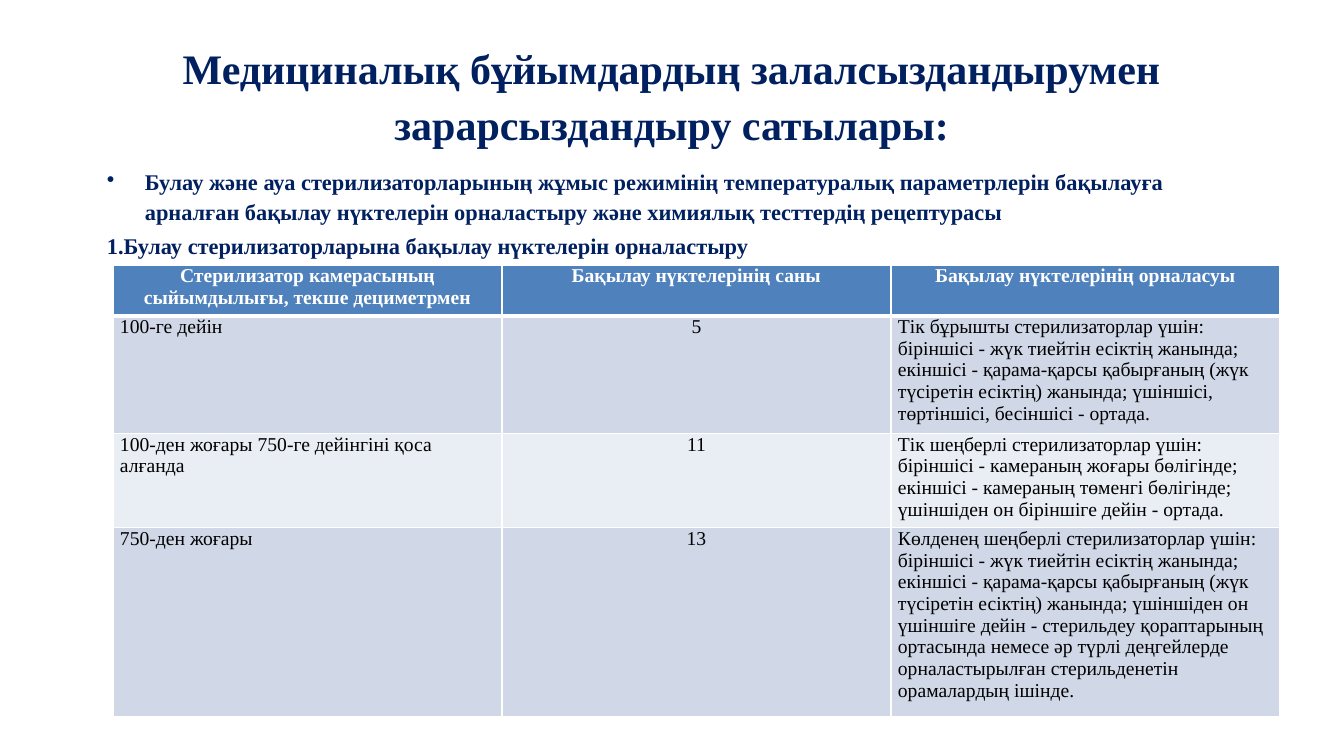
from dataclasses import dataclass

from pptx import Presentation
from pptx.dml.color import RGBColor
from pptx.enum.text import MSO_ANCHOR, PP_ALIGN
from pptx.oxml.ns import qn
from pptx.util import Emu, Pt
from lxml import etree

LEFT, CENTER = PP_ALIGN.LEFT, PP_ALIGN.CENTER
TOP, MIDDLE = MSO_ANCHOR.TOP, MSO_ANCHOR.MIDDLE
SLIDE_WIDTH, SLIDE_HEIGHT = 1344, 756
EMU_PER_PX = 12192000 / SLIDE_WIDTH


@dataclass(frozen=True)
class Theme:
    font: str = "Times New Roman"
    navy: str = "002060"
    white: str = "FFFFFF"
    black: str = "000000"
    header: str = "4F81BD"
    bands: tuple = ("D0D8E8", "E9EDF4")
    title_size: int = 30
    body_size: int = 16
    table_size: int = 14
    line_spacing: float = 1.1
    thin: int = 1
    thick: int = 3


TITLE = "Медициналық бұйымдардың залалсыздандырумен зарарсыздандыру сатылары:"
INTRO = (
    "Булау және ауа стерилизаторларының жұмыс режимінің температуралық "
    "параметрлерін бақылауға арналған бақылау нүктелерін орналастыру және "
    "химиялық тесттердің рецептурасы"
)
SUBHEADING = "1.Булау стерилизаторларына бақылау нүктелерін орналастыру"
COLUMN_WIDTH = 389
ROW_HEIGHTS = (51, 108, 87, 173)
ROWS = (
    (
        "Стерилизатор камерасының сыйымдылығы, текше дециметрмен",
        "Бақылау нүктелерінің саны",
        "Бақылау нүктелерінің орналасуы",
    ),
    (
        "100-ге дейін",
        "5",
        "Тік бұрышты стерилизаторлар үшін: біріншісі - жүк тиейтін есіктің жанында;\n"
        "екіншісі - қарама-қарсы қабырғаның (жүк түсіретін есіктің) жанында; "
        "үшіншісі, төртіншісі, бесіншісі - ортада.",
    ),
    (
        "100-ден жоғары 750-ге дейінгіні қоса алғанда",
        "11",
        "Тік шеңберлі стерилизаторлар үшін:\n"
        "біріншісі - камераның жоғары бөлігінде;\n"
        "екіншісі - камераның төменгі бөлігінде;\n"
        "үшіншіден он біріншіге дейін - ортада.",
    ),
    (
        "750-ден жоғары",
        "13",
        "Көлденең шеңберлі стерилизаторлар үшін:\n"
        "біріншісі - жүк тиейтін есіктің жанында;\n"
        "екіншісі - қарама-қарсы қабырғаның (жүк түсіретін есіктің) жанында; "
        "үшіншіден он үшіншіге дейін - стерильдеу қораптарының ортасында немесе "
        "әр түрлі деңгейлерде орналастырылған стерильденетін орамалардың ішінде.",
    ),
)


def px(length):
    return Emu(round(length * EMU_PER_PX))


class SlideBuilder:
    """Draws themed elements on one slide, with lengths in px."""

    def __init__(self, slide, theme):
        self.slide = slide
        self.theme = theme

    def style(self, paragraph, size, color, bold, align=LEFT):
        paragraph.alignment = align
        font = paragraph.font
        font.name, font.size, font.bold = self.theme.font, Pt(size), bold
        font.color.rgb = RGBColor.from_string(color)

    def text(self, left, top, width, height, lines, size, align=LEFT, anchor=TOP):
        box = self.slide.shapes.add_textbox(px(left), px(top), px(width), px(height))
        frame = box.text_frame
        frame.word_wrap = True
        frame.vertical_anchor = anchor
        frame.text = "\n".join(lines)
        for paragraph in frame.paragraphs:
            paragraph.line_spacing = self.theme.line_spacing
            self.style(paragraph, size, self.theme.navy, True, align)
        return frame.paragraphs

    def hang(self, paragraph, indent, bullet=None):
        paragraph.space_before = Pt(self.theme.body_size * 0.2)
        properties = paragraph._p.get_or_add_pPr()
        properties.set("marL", str(px(indent)))
        properties.set("indent", str(-px(indent)))
        if bullet:
            mark = etree.Element(qn("a:buChar"), char=bullet)
            properties.find(qn("a:defRPr")).addprevious(mark)

    def border(self, cell, side, width):
        properties = cell._tc.get_or_add_tcPr()
        line = etree.SubElement(properties, qn(f"a:ln{side}"), w=str(Pt(width)))
        fill = etree.SubElement(line, qn("a:solidFill"))
        etree.SubElement(fill, qn("a:srgbClr"), val=self.theme.white)

    def cell(self, cell, text, row, column):
        theme = self.theme
        is_header = row == 0
        cell.margin_left = cell.margin_right = px(7)
        cell.margin_top = cell.margin_bottom = 0
        cell.text = text
        color = theme.white if is_header else theme.black
        align = CENTER if is_header or column == 1 else LEFT
        for paragraph in cell.text_frame.paragraphs:
            self.style(paragraph, theme.table_size, color, is_header, align)
        for side in "LRTB":
            under_header = (row, side) in ((0, "B"), (1, "T"))
            self.border(cell, side, theme.thick if under_header else theme.thin)
        fill = theme.header if is_header else theme.bands[(row - 1) % 2]
        cell.fill.solid()
        cell.fill.fore_color.rgb = RGBColor.from_string(fill)

    def table(self, left, top, column_width, row_heights, rows):
        columns = len(rows[0])
        frame = self.slide.shapes.add_table(
            len(rows), columns, px(left), px(top),
            px(column_width * columns), px(sum(row_heights)),
        )
        table = frame.table
        for column in table.columns:
            column.width = px(column_width)
        for row, (height, texts) in enumerate(zip(row_heights, rows)):
            table.rows[row].height = px(height)
            for column, text in enumerate(texts):
                self.cell(table.cell(row, column), text, row, column)


def main():
    presentation = Presentation()
    presentation.slide_width = px(SLIDE_WIDTH)
    presentation.slide_height = px(SLIDE_HEIGHT)
    slide = presentation.slides.add_slide(presentation.slide_layouts[6])
    theme = Theme()
    builder = SlideBuilder(slide, theme)
    builder.text(67, 30, 1210, 126, [TITLE], theme.title_size, CENTER, MIDDLE)
    intro, subheading = builder.text(
        97, 161, 1159, 519, [INTRO, SUBHEADING], theme.body_size
    )
    builder.hang(intro, 38, "•")
    builder.hang(subheading, 38)
    builder.table(113, 265, COLUMN_WIDTH, ROW_HEIGHTS, ROWS)
    presentation.save("out.pptx")


if __name__ == "__main__":
    main()
